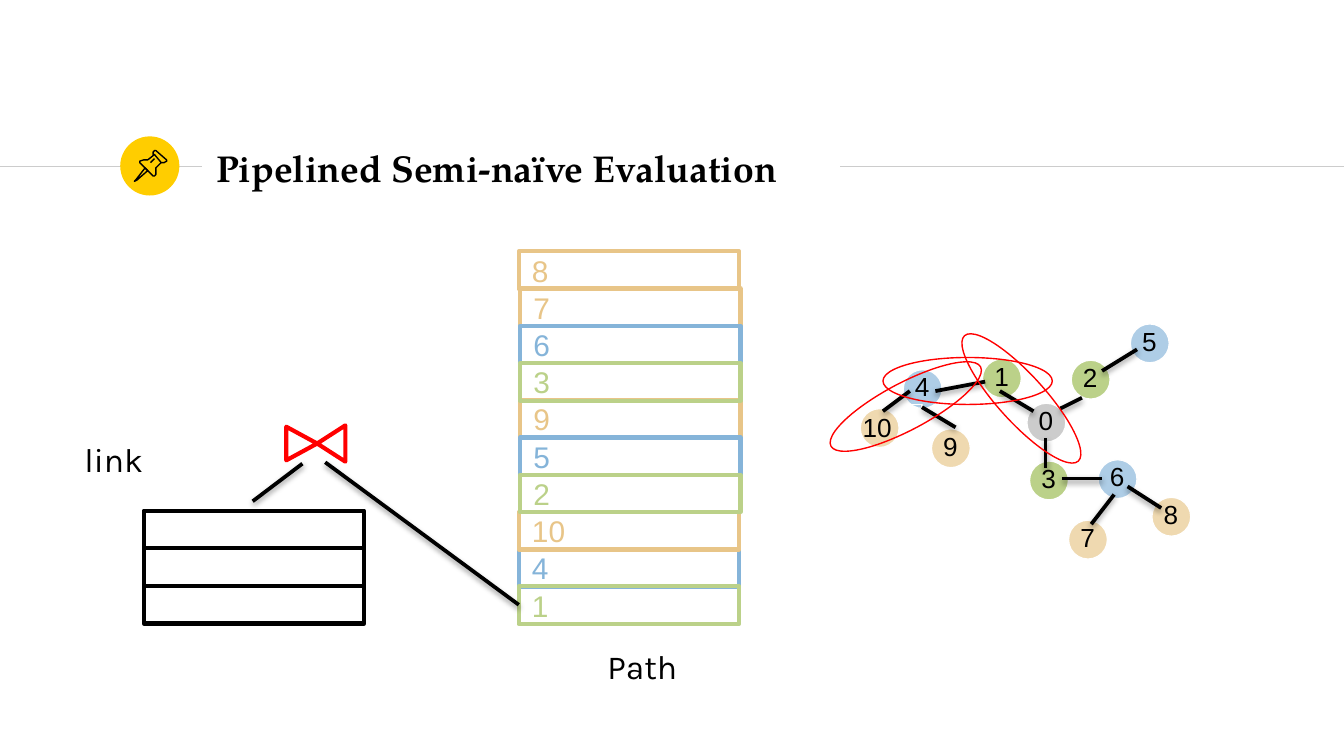
from lxml import etree
from pptx import Presentation
from pptx.dml.color import RGBColor
from pptx.enum.shapes import MSO_CONNECTOR as Connector, MSO_SHAPE as Shape
from pptx.enum.text import MSO_ANCHOR as Anchor, PP_ALIGN as Align
from pptx.oxml.ns import qn
from pptx.util import Inches, Pt

COLORS = {
    "black": "000000", "white": "FFFFFF", "rule": "CCCCCC", "yellow": "FFCD00",
    "red": "FF0000", "green": "BBD189", "blue": "85B4D9", "tan": "E8C588",
    "light blue": "AECDE6", "light tan": "EFD9B0",
}
CELL = Inches(0.1)  # the slide is a grid of 100 columns by 56.25 rows


def cells(*counts):
    return [round(count * CELL) for count in counts]


def color(name):
    return RGBColor.from_string(COLORS[name])


def write(shape, text, size=14, font="Arial", ink="black", bold=False,
          anchor=Anchor.TOP, wrap=True):
    frame = shape.text_frame
    frame.word_wrap = wrap
    frame.vertical_anchor = anchor
    paragraph = frame.paragraphs[0]
    paragraph.alignment = Align.LEFT
    run = paragraph.add_run()
    run.text = text
    run.font.size = Pt(size)
    run.font.name = font
    run.font.bold = bold
    run.font.color.rgb = color(ink)


class Canvas:
    """Holds the current slide and draws on its grid."""

    def __init__(self, slide):
        self.slide = slide
        self.shapes = slide.shapes

    def style(self, shape, fill=None, line=None, weight=0.75):
        shape.shadow.inherit = False
        if fill:
            shape.fill.solid()
            shape.fill.fore_color.rgb = color(fill)
        else:
            shape.fill.background()
        if line:
            shape.line.color.rgb = color(line)
            shape.line.width = Pt(weight)
        else:
            shape.line.fill.background()
        return shape

    def shape(self, kind, left, top, width, height, turn=0, **look):
        shape = self.shapes.add_shape(kind, *cells(left, top, width, height))
        shape.rotation = turn
        return self.style(shape, **look)

    def text(self, left, top, width, height, text, **look):
        box = self.shapes.add_textbox(*cells(left, top, width, height))
        write(box, text, **look)

    def line(self, start, end, ink="black", weight=2, shadow=True):
        line = self.shapes.add_connector(Connector.STRAIGHT, *cells(*start, *end))
        line.line.color.rgb = color(ink)
        line.line.width = Pt(weight)
        effects = etree.SubElement(line._element.spPr, qn("a:effectLst"))
        if shadow:
            outer = etree.SubElement(effects, qn("a:outerShdw"), blurRad=str(Pt(3.1)),
                                     dist=str(Pt(1.6)), dir="5400000", rotWithShape="0")
            tint = etree.SubElement(outer, qn("a:srgbClr"), val=COLORS["black"])
            etree.SubElement(tint, qn("a:alpha"), val="38000")

    def outline(self, points, closed=False):
        """Joins points given in tenths of a cell."""
        builder = self.shapes.build_freeform(*points[0], scale=CELL / 10)
        builder.add_line_segments(points[1:], close=closed)
        self.style(builder.convert_to_shape(), line="black")

    def node(self, left, top, label, fill):
        self.shape(Shape.OVAL, left, top, 2.9, 2.9, fill=fill, line="white")
        if len(label) == 1:
            self.text(left - 0.1, top - 0.4, 2.4, 3.4, label)
        else:
            box = self.shape(Shape.RECTANGLE, left - 0.8, top - 0.3, 5.4, 3.4, line="white")
            write(box, label)

    def row(self, left, top, ink, label=None):
        box = self.shape(Shape.RECTANGLE, left, top, 16.4, 2.8, line=ink, weight=2.25)
        if label:
            write(box, label, size=16, ink=ink, anchor=Anchor.MIDDLE, wrap=False)


def draw_header(canvas):
    canvas.line((0, 12.4), (15, 12.4), ink="rule", weight=0.75, shadow=False)
    canvas.shape(Shape.OVAL, 8.95, 10.15, 4.4, 4.4, fill="yellow")
    canvas.line((57.6, 12.4), (100, 12.4), ink="rule", weight=0.75, shadow=False)
    # Pin: needle, cap, body and crease
    canvas.outline([(108, 125), (101, 134), (100, 135), (102, 134), (110, 127)],
                   closed=True)
    canvas.outline([(115, 115), (120, 121), (122, 121), (124, 120), (124, 119),
                    (116, 112), (115, 112), (114, 113), (114, 115)], closed=True)
    canvas.outline([(115, 115), (110, 119), (107, 119), (104, 120), (104, 121),
                    (114, 131), (115, 131), (116, 130), (116, 125), (120, 121)])
    canvas.outline([(112, 121), (115, 118)])
    canvas.shape(Shape.RECTANGLE, 56, 12.1, 6.5, 1.1, fill="white")
    canvas.text(15.1, 10.1, 57.4, 4.8, "Pipelined Semi-naïve Evaluation", size=20,
                font="TeX Gyre Pagella", bold=True, anchor=Anchor.MIDDLE)


def draw_network(canvas):
    nodes = [
        (73.1, 26.7, "1", "green"), (79.7, 26.8, "2", "green"), (76.4, 30, "0", "rule"),
        (67.2, 27.5, "4", "light blue"), (76.6, 34.3, "3", "green"),
        (81.7, 34.2, "6", "light blue"), (84.1, 24.1, "5", "light blue"),
        (69.3, 31.9, "9", "light tan"), (85.7, 37, "8", "light tan"),
        (79.5, 38.7, "7", "light tan"), (64, 30.4, "10", "light tan"),
    ]
    for node in nodes:
        canvas.node(*node)
    edges = [
        ((77.8, 32.6), (77.8, 34.8)), ((74.4, 29.1), (76.9, 30.6)),
        ((80.5, 29.6), (78.9, 30.4)), ((69.6, 29.1), (73.3, 28.4)),
        ((68.6, 30.3), (71.1, 31.8)), ((67.7, 29.1), (65.7, 30.6)),
        ((82, 27.6), (84.6, 26)), ((79, 35.6), (82, 35.6)),
        ((83.9, 36.2), (86.4, 37.8)), ((82.9, 36.8), (81.2, 39)),
    ]
    for start, end in edges:
        canvas.line(start, end)


def draw_join(canvas):
    # Link table
    for index in range(3):
        canvas.row(10.7, 38 + 2.8 * index, "black")
    canvas.text(5.3, 32.2, 6.6, 4, "link", size=18, font="Karla")
    # Path table: row number from the top, in stacking order
    path_rows = [
        (8, "4", "blue"), (9, "1", "green"), (7, "10", "tan"),
        (4, "9", "tan"), (5, "5", "blue"), (6, "2", "green"),
        (1, "7", "tan"), (2, "6", "blue"), (3, "3", "green"), (0, "8", "tan"),
    ]
    for index, label, ink in path_rows:
        left = 38.7 if 0 < index < 7 else 38.6
        canvas.row(left, 18.7 + 2.77 * index, ink, label)
    canvas.text(44.2, 47.6, 10.8, 4, "Path", size=18, font="Karla")
    # Join symbol and its inputs
    canvas.line((18.8, 37.3), (22.5, 34.5))
    canvas.line((38.6, 45), (24.2, 34.4))
    for left, width, height, turn in ((23.3, 2.7, 2.1, 270), (21.2, 2.5, 2.3, 90)):
        canvas.shape(Shape.ISOSCELES_TRIANGLE, left, 33 - height / 2, width, height,
                     turn=turn, line="red", weight=2.25)


def draw_highlights(canvas):
    for left, top, turn in ((65.7, 26.6, 0), (61.1, 28.5, 332.1), (69.7, 27.9, 47.8)):
        canvas.shape(Shape.OVAL, left, top, 12.6, 3.5, turn=turn, line="red")


def main():
    presentation = Presentation()
    presentation.slide_width, presentation.slide_height = cells(100, 56.25)
    canvas = Canvas(presentation.slides.add_slide(presentation.slide_layouts[6]))
    draw_header(canvas)
    draw_network(canvas)
    draw_join(canvas)
    draw_highlights(canvas)
    presentation.save("out.pptx")


if __name__ == "__main__":
    main()
